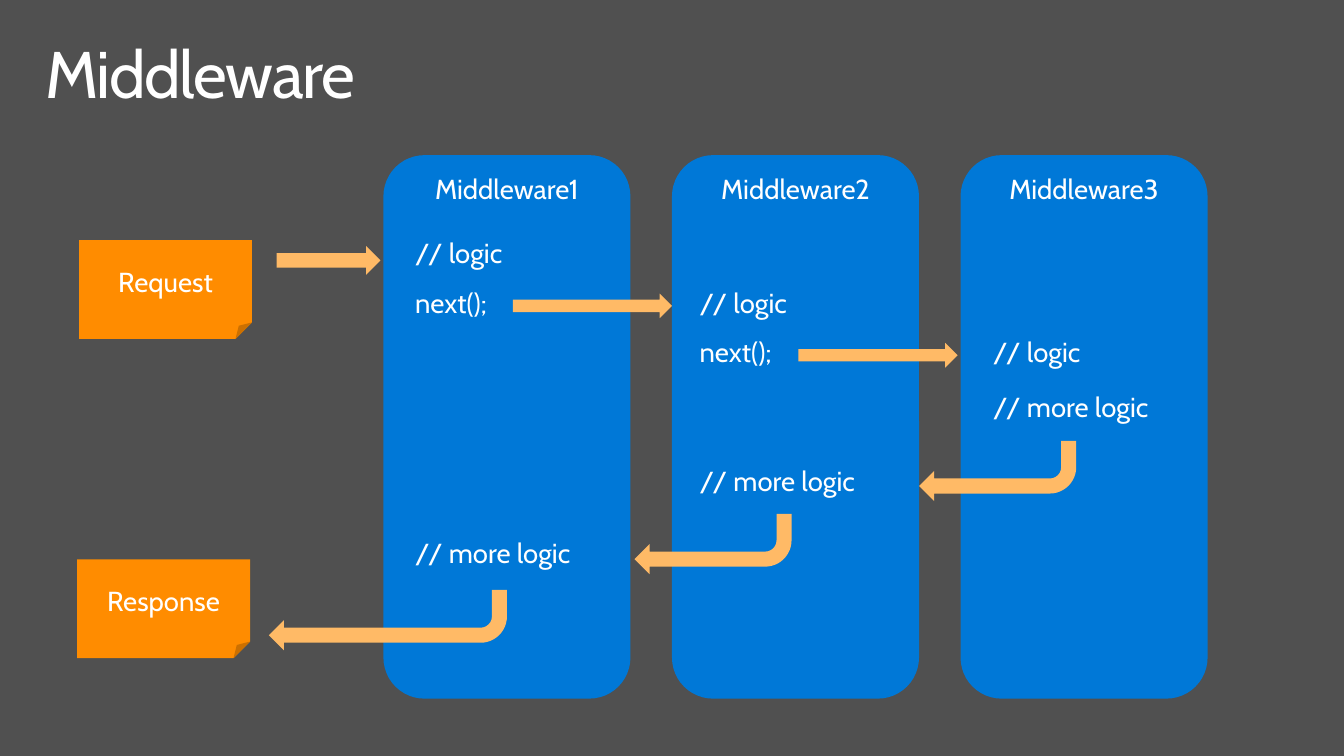
from dataclasses import dataclass

from pptx import Presentation
from pptx.dml.color import RGBColor
from pptx.enum.shapes import MSO_SHAPE
from pptx.enum.text import MSO_ANCHOR, MSO_AUTO_SIZE, PP_ALIGN
from pptx.util import Inches, Pt


@dataclass(frozen=True)
class Theme:
    background: RGBColor = RGBColor(0x50, 0x50, 0x50)
    lane: RGBColor = RGBColor(0x00, 0x78, 0xD7)
    card: RGBColor = RGBColor(0xFF, 0x8C, 0x00)
    arrow: RGBColor = RGBColor(0xFF, 0xBA, 0x66)
    text: RGBColor = RGBColor(0xFF, 0xFF, 0xFF)
    font: str = "Cabin"
    title_size: int = 48
    body_size: int = 20


THEME = Theme()

LANE_LEFT, LANE_TOP, LANE_PITCH = 3.88, 1.57, 2.92
LANE_WIDTH, LANE_HEIGHT = 2.5, 5.5
STEP_WIDTHS = {"// logic": 1.29, "next();": 1.16, "// more logic": 2.02}

LANES = [
    ("Middleware1", 0.12, [("// logic", 0.71), ("next();", 1.21), ("// more logic", 3.74)]),
    ("Middleware2", 0.08, [("// logic", 1.21), ("next();", 1.71), ("// more logic", 3.01)]),
    ("Middleware3", 0.13, [("// logic", 1.71), ("// more logic", 2.26)]),
]
CARDS = [("Request", 0.8, 2.43), ("Response", 0.78, 5.66)]
FORWARD_ARROWS = [
    (2.8, 2.49, 1.05, 0.29),
    (5.19, 2.97, 1.61, 0.25),
    (8.08, 3.47, 1.61, 0.25),
]
RETURN_ARROWS = [
    (9.3, 4.46, 1.59, 0.61),
    (6.42, 5.2, 1.59, 0.61),
    (2.72, 5.97, 2.41, 0.61),
]


def inches(box):
    return [Inches(v) for v in box]


def write(tf, text, size, margins, align, anchor=MSO_ANCHOR.TOP):
    tf.text = text
    tf.vertical_anchor = anchor
    tf.margin_left = tf.margin_right = Inches(margins[0])
    tf.margin_top = tf.margin_bottom = Inches(margins[1])
    p = tf.paragraphs[0]
    p.alignment = align
    r = p.runs[0]
    r.font.name = THEME.font
    r.font.size = Pt(size)
    r.font.color.rgb = THEME.text
    return p


def add_block(s, kind, box, color):
    sp = s.shapes.add_shape(kind, *inches(box))
    sp.shadow.inherit = False
    sp.fill.solid()
    sp.fill.fore_color.rgb = color
    sp.line.fill.background()
    return sp


def add_title(s, box, text):
    sp = s.shapes.title
    sp.left, sp.top, sp.width, sp.height = inches(box)
    tf = sp.text_frame
    p = write(tf, text, THEME.title_size, (0.16, 0.1), PP_ALIGN.LEFT)
    tf.word_wrap = True
    tf.auto_size = MSO_AUTO_SIZE.NONE
    p.line_spacing = 0.9
    p.runs[0].font._element.set("spc", "-100")


def add_step(s, left, top, text):
    sp = s.shapes.add_textbox(*inches((left, top, STEP_WIDTHS[text], 0.63)))
    tf = sp.text_frame
    p = write(tf, text, THEME.body_size, (0.2, 0.16), PP_ALIGN.LEFT)
    tf.word_wrap = False
    tf.auto_size = MSO_AUTO_SIZE.SHAPE_TO_FIT_TEXT
    p.line_spacing = 0.9
    p.space_after = Pt(6)


def add_lane(s, box, name):
    sp = add_block(s, MSO_SHAPE.ROUNDED_RECTANGLE, box, THEME.lane)
    write(sp.text_frame, name, THEME.body_size, (0, 0.05), PP_ALIGN.CENTER)


def add_steps(s, box, indent, steps):
    left, top = box[:2]
    for text, offset in steps:
        add_step(s, left + indent, top + offset, text)


def add_card(s, box, text):
    sp = add_block(s, MSO_SHAPE.FOLDED_CORNER, box, THEME.card)
    write(sp.text_frame, text, THEME.body_size, (0, 0.05), PP_ALIGN.CENTER, MSO_ANCHOR.MIDDLE)


def add_arrows(s):
    for box in FORWARD_ARROWS:
        add_block(s, MSO_SHAPE.RIGHT_ARROW, box, THEME.arrow)
    for box in RETURN_ARROWS:
        add_block(s, MSO_SHAPE.BENT_ARROW, box, THEME.arrow).rotation = 180


def add_middleware_slide(prs):
    s = prs.slides.add_slide(prs.slide_layouts[5])
    s.background.fill.solid()
    s.background.fill.fore_color.rgb = THEME.background
    add_title(s, (0.3, 0.32, 13, 1), "Middleware")
    for i, (name, indent, steps) in enumerate(LANES):
        box = (LANE_LEFT + i * LANE_PITCH, LANE_TOP, LANE_WIDTH, LANE_HEIGHT)
        add_lane(s, box, name)
        add_steps(s, box, indent, steps)
    for text, left, top in CARDS:
        add_card(s, (left, top, 1.75, 1), text)
    add_arrows(s)


def main():
    prs = Presentation()
    prs.slide_width, prs.slide_height = Inches(13.6), Inches(7.65)
    add_middleware_slide(prs)
    prs.save("out.pptx")


if __name__ == "__main__":
    main()
